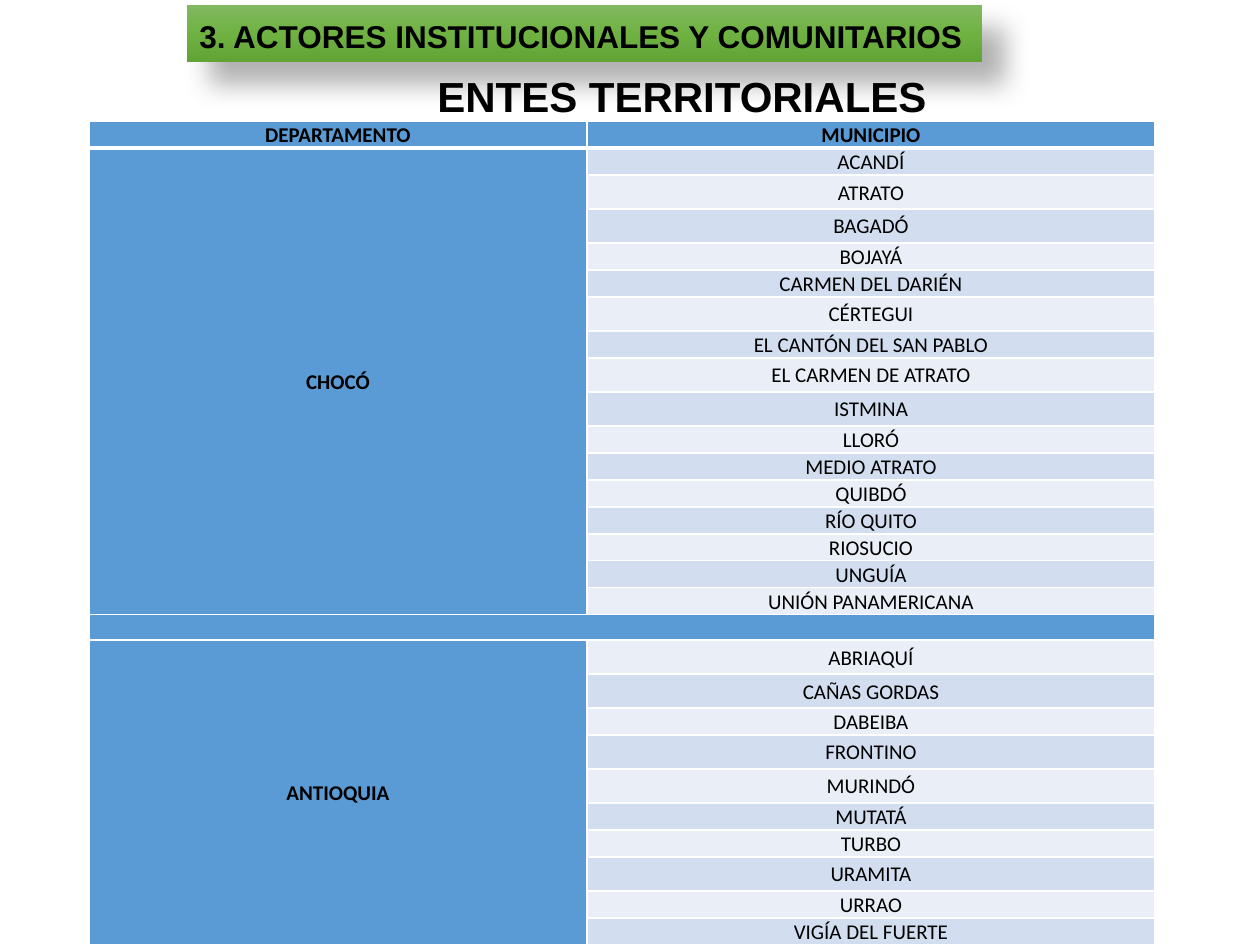
from dataclasses import dataclass

from lxml.etree import SubElement
from pptx import Presentation
from pptx.dml.color import RGBColor
from pptx.enum.shapes import MSO_SHAPE
from pptx.enum.text import MSO_ANCHOR, MSO_AUTO_SIZE, PP_ALIGN
from pptx.oxml import parse_xml
from pptx.oxml.ns import nsdecls, qn
from pptx.slide import Slide
from pptx.util import Pt

PX = 914400 / 126
BLACK = RGBColor(0x00, 0x00, 0x00)
WHITE = RGBColor(0xFF, 0xFF, 0xFF)
BLUE = RGBColor(0x5B, 0x9B, 0xD5)
BANDS = (RGBColor(0xEA, 0xEF, 0xF7), RGBColor(0xD2, 0xDE, 0xEF))
GREENS = (RGBColor(0x81, 0xB8, 0x61), RGBColor(0x6F, 0xB2, 0x42), RGBColor(0x62, 0xA3, 0x36))

HEADERS = ("DEPARTAMENTO", "MUNICIPIO")
DEPARTMENTS = {
    "CHOCÓ": [
        "ACANDÍ", "ATRATO", "BAGADÓ", "BOJAYÁ", "CARMEN DEL DARIÉN", "CÉRTEGUI",
        "EL CANTÓN DEL SAN PABLO", "EL CARMEN DE ATRATO", "ISTMINA", "LLORÓ",
        "MEDIO ATRATO", "QUIBDÓ", "RÍO QUITO", "RIOSUCIO", "UNGUÍA",
        "UNIÓN PANAMERICANA",
    ],
    "ANTIOQUIA": [
        "ABRIAQUÍ", "CAÑAS GORDAS", "DABEIBA", "FRONTINO", "MURINDÓ", "MUTATÁ",
        "TURBO", "URAMITA", "URRAO", "VIGÍA DEL FUERTE",
    ],
}
TALL_ROWS = {
    "ATRATO", "BAGADÓ", "CÉRTEGUI", "EL CARMEN DE ATRATO", "ISTMINA",
    "ABRIAQUÍ", "CAÑAS GORDAS", "FRONTINO", "MURINDÓ", "URAMITA",
}
ROW_HEIGHT, TALL_HEIGHT = 24, 34


def px(*lengths):
    return [round(length * PX) for length in lengths]


@dataclass
class Painter:
    page: Slide
    heading_font: str = "Arial"
    table_font: str = "Calibri"

    def style(self, para, font, size, bold):
        para.font.name = font
        para.font.size = Pt(size)
        para.font.bold = bold
        para.font.color.rgb = BLACK

    def banner(self, text, left, top, width, height):
        box = self.page.shapes.add_shape(MSO_SHAPE.RECTANGLE, *px(left, top, width, height))
        box.line.fill.background()
        # Three-stop vertical gradient, then a soft shadow to the lower right
        stops = "".join(
            f'<a:gs pos="{place * 50000}"><a:srgbClr val="{color}"/></a:gs>'
            for place, color in enumerate(GREENS)
        )
        gradient = parse_xml(
            f'<a:gradFill {nsdecls("a")} rotWithShape="1"><a:gsLst>{stops}</a:gsLst>'
            '<a:lin ang="5400000" scaled="0"/></a:gradFill>'
        )
        properties = box.fill._xPr
        properties.find(qn("a:prstGeom")).addnext(gradient)
        properties.append(parse_xml(
            f'<a:effectLst {nsdecls("a")}><a:outerShdw blurRad="{Pt(15)}" dist="{Pt(18)}" '
            f'dir="2700000" algn="tl" rotWithShape="0"><a:srgbClr val="{BLACK}">'
            '<a:alpha val="30000"/></a:srgbClr></a:outerShdw></a:effectLst>'
        ))
        frame = box.text_frame
        frame.word_wrap = True
        frame.vertical_anchor = MSO_ANCHOR.TOP
        para = frame.paragraphs[0]
        para.text = text
        para.alignment = PP_ALIGN.JUSTIFY
        para.line_spacing = 1.15
        self.style(para, self.heading_font, 18, True)

    def title(self, text, left, top, width, height):
        box = self.page.shapes.add_textbox(*px(left, top, width, height))
        frame = box.text_frame
        frame.word_wrap = False
        frame.auto_size = MSO_AUTO_SIZE.SHAPE_TO_FIT_TEXT
        para = frame.paragraphs[0]
        para.text = text
        self.style(para, self.heading_font, 24, True)

    def table(self, left, top, widths, heights):
        frame = self.page.shapes.add_table(
            len(heights), len(widths), *px(left, top, sum(widths), sum(heights))
        )
        grid = frame.table
        grid.horz_banding = False
        for column, width in zip(grid.columns, px(*widths)):
            column.width = width
        for row, height in zip(grid.rows, px(*heights)):
            row.height = height
        return grid

    def cell(self, cell, text, fill, bold=False, top=1, bottom=1):
        cell.vertical_anchor = MSO_ANCHOR.MIDDLE
        cell.margin_left, cell.margin_right = px(4, 4)
        cell.margin_top = cell.margin_bottom = 0
        para = cell.text_frame.paragraphs[0]
        para.alignment = PP_ALIGN.CENTER
        if text:
            para.text = text
            para.line_spacing = 1.07
        else:
            # An empty cell takes its line height from the paragraph end mark
            SubElement(para._p, qn("a:endParaRPr"), sz="1200")
        self.style(para, self.table_font, 12, bold)
        properties = cell._tc.get_or_add_tcPr()
        for side, width in (("L", 1), ("R", 1), ("T", top), ("B", bottom)):
            properties.append(parse_xml(
                f'<a:ln{side} {nsdecls("a")} w="{Pt(width)}"><a:solidFill>'
                f'<a:srgbClr val="{WHITE}"/></a:solidFill></a:ln{side}>'
            ))
        cell.fill.solid()
        cell.fill.fore_color.rgb = fill


def main():
    deck = Presentation()
    deck.slide_width, deck.slide_height = px(1260, 945)
    page = deck.slides.add_slide(deck.slide_layouts[6])
    painter = Painter(page)

    # Headings
    painter.banner("3. ACTORES INSTITUCIONALES Y COMUNITARIOS", 187, 5, 795, 57)
    painter.title("ENTES TERRITORIALES", 425, 64, 519, 63)

    # Rows: header, then each department with an empty divider between them
    rows = [HEADERS]
    groups = []
    for department, towns in DEPARTMENTS.items():
        if groups:
            rows.append(("", ""))
        groups.append((len(rows), len(towns)))
        rows += [(department if place == 0 else "", town) for place, town in enumerate(towns)]

    heights = [TALL_HEIGHT if town in TALL_ROWS else ROW_HEIGHT for _, town in rows]
    grid = painter.table(89, 121, (498, 568), heights)
    for index, (department, town) in enumerate(rows):
        header = index == 0
        top, bottom = 3 if index == 1 else 1, 3 if header else 1
        town_fill = BLUE if header or not town else BANDS[index % 2]
        painter.cell(grid.cell(index, 0), department, BLUE, True, top, bottom)
        painter.cell(grid.cell(index, 1), town, town_fill, header, top, bottom)

    # Merged department cells and divider
    for first, count in groups:
        grid.cell(first, 0).merge(grid.cell(first + count - 1, 0))
    divider = groups[1][0] - 1
    grid.cell(divider, 0).merge(grid.cell(divider, 1))

    deck.save("out.pptx")


if __name__ == "__main__":
    main()
